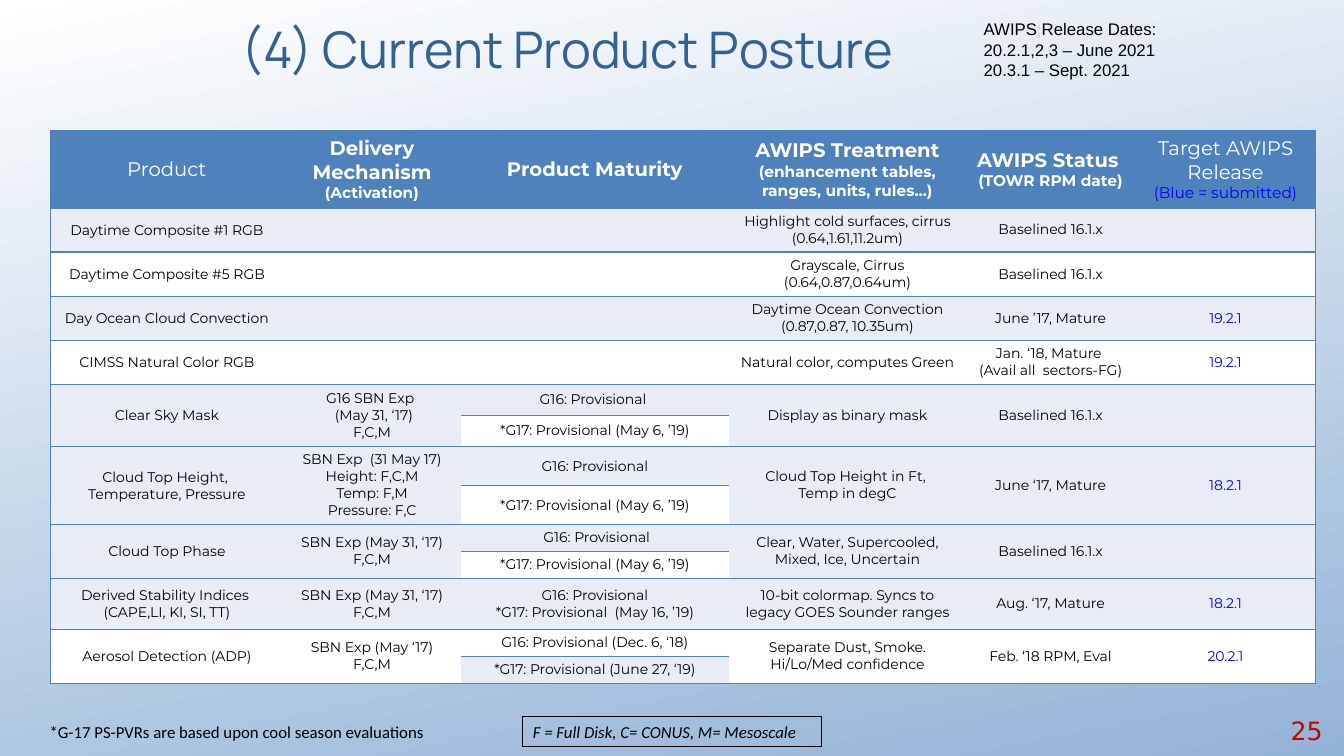
from pptx import Presentation
from pptx.dml.color import RGBColor
from pptx.enum.shapes import MSO_SHAPE
from pptx.enum.text import MSO_ANCHOR, PP_ALIGN
from pptx.oxml import parse_xml
from pptx.oxml.ns import nsdecls, qn
from pptx.util import Cm, Pt

STEEL = RGBColor(0x4F, 0x81, 0xBD)
NAVY = RGBColor(0x37, 0x60, 0x92)
SKY = RGBColor(0x93, 0xB3, 0xD7)
PALE = RGBColor(0xE8, 0xEC, 0xF4)
WHITE = RGBColor(0xFF, 0xFF, 0xFF)
BLACK = RGBColor(0, 0, 0)
BLUE = RGBColor(0, 0, 0xFF)
RED = RGBColor(0xCC, 0, 0)

NO_GRID_STYLE = "{2D5ABB26-0587-4C30-8999-92F81FD0307C}"
COLUMN_WIDTHS = [5.87, 4.47, 6.76, 5.97, 4.27, 4.55]
HEADER_HEIGHT = 1.94
MATURITY, RELEASE = 2, 5

# Heading, smaller second line, bold, colour of the second line
HEADERS = [
    ("Product", "", False, WHITE),
    ("Delivery Mechanism", "(Activation)", True, WHITE),
    ("Product Maturity", "", True, WHITE),
    ("AWIPS Treatment", "(enhancement tables,\vranges, units, rules…)", True, WHITE),
    ("AWIPS Status ", "(TOWR RPM date)", True, WHITE),
    ("Target AWIPS Release", "(Blue = submitted)", False, BLUE),
]

# Row heights, fill, then the six columns; two heights split the maturity column
PRODUCTS = [
    ([1.11], PALE, "Daytime Composite #1 RGB", "", [""],
     "Highlight cold surfaces, cirrus (0.64,1.61,11.2um)", "Baselined 16.1.x", ""),
    ([1.11], WHITE, "Daytime Composite #5 RGB", "", [""],
     "Grayscale, Cirrus (0.64,0.87,0.64um)", "Baselined 16.1.x", ""),
    ([1.11], PALE, "Day Ocean Cloud Convection", "", [""],
     "Daytime Ocean Convection\n(0.87,0.87, 10.35um)", "June ’17, Mature", "19.2.1"),
    ([1.11], WHITE, "CIMSS Natural Color RGB", "", [""],
     "Natural color, computes Green", "Jan. ‘18, Mature \n(Avail all  sectors-FG)", "19.2.1"),
    ([0.78, 0.78], PALE, "Clear Sky Mask", "G16 SBN Exp \n (May 31, ‘17)\vF,C,M",
     ["G16: Provisional ", "*G17: Provisional (May 6, ’19)"],
     "Display as binary mask", "Baselined 16.1.x", ""),
    ([1.0, 0.96], PALE, "Cloud Top Height, \nTemperature, Pressure",
     "SBN Exp  (31 May 17)\vHeight: F,C,M\vTemp: F,M\vPressure: F,C",
     ["G16: Provisional", "*G17: Provisional (May 6, ’19)"],
     "Cloud Top Height in Ft, \nTemp in degC", "June ‘17, Mature", "18.2.1"),
    ([0.68, 0.68], PALE, "Cloud Top Phase", "SBN Exp (May 31, ‘17)\vF,C,M",
     [" G16: Provisional", "*G17: Provisional (May 6, ’19)"],
     "Clear, Water, Supercooled, Mixed, Ice, Uncertain", "Baselined 16.1.x", ""),
    ([1.28], PALE, "Derived Stability Indices \n(CAPE,LI, KI, SI, TT)",
     "SBN Exp (May 31, ‘17)\nF,C,M",
     ["G16: Provisional\v*G17: Provisional  (May 16, ’19)"],
     "10-bit colormap. Syncs to legacy GOES Sounder ranges", "Aug. ‘17, Mature", "18.2.1"),
    ([0.68, 0.68], WHITE, "Aerosol Detection (ADP)", "SBN Exp (May ‘17)\vF,C,M",
     ["G16: Provisional (Dec. 6, ‘18)", "*G17: Provisional (June 27, ‘19)"],
     "Separate Dust, Smoke. Hi/Lo/Med confidence", "Feb. ‘18 RPM, Eval", "20.2.1"),
]


class PostureSlide:
    """Holds the table style and the slide being filled."""

    table_font = "Montserrat"

    def __init__(self, deck):
        self.page = deck.slides.add_slide(deck.slide_layouts[5])

    def background(self, start, end, angle):
        fill = self.page.background.fill
        fill.gradient()
        fill.gradient_angle = angle
        for stop, color in zip(fill.gradient_stops, (start, end)):
            stop.color.rgb = color

    def style(self, para, font, size, color, align=PP_ALIGN.LEFT, bold=False, italic=False):
        para.alignment = align
        para.font.name, para.font.size = font, Pt(size)
        para.font.bold, para.font.italic = bold, italic
        para.font.color.rgb = color

    def title(self, text, left, top, width, height):
        title = self.page.shapes.title
        title.left, title.top, title.width, title.height = map(Cm, (left, top, width, height))
        title.text_frame.text = text
        title.text_frame.vertical_anchor = MSO_ANCHOR.MIDDLE
        self.style(title.text_frame.paragraphs[0], "Manrope", 36, NAVY, PP_ALIGN.CENTER)

    def text(self, text, left, top, width, height, font, size, color=BLACK,
             align=PP_ALIGN.LEFT, italic=False, framed=False):
        place = list(map(Cm, (left, top, width, height)))
        if framed:
            box = self.page.shapes.add_shape(MSO_SHAPE.RECTANGLE, *place)
            box.shadow.inherit = False
            box.fill.background()
            box.line.color.rgb = BLACK
            box.line.width = Pt(0.75)
        else:
            box = self.page.shapes.add_textbox(*place)
        frame = box.text_frame
        frame.word_wrap = True
        frame.vertical_anchor = MSO_ANCHOR.TOP
        frame.text = text
        for para in frame.paragraphs:
            self.style(para, font, size, color, align, italic=italic)

    def table(self, left, top):
        heights = [HEADER_HEIGHT] + [height for product in PRODUCTS for height in product[0]]
        table = self.page.shapes.add_table(
            len(heights), len(COLUMN_WIDTHS), Cm(left), Cm(top),
            Cm(sum(COLUMN_WIDTHS)), Cm(sum(heights))).table
        table.horz_banding = table.first_row = False
        table._tbl.tblPr.find(qn("a:tableStyleId")).text = NO_GRID_STYLE
        for column, width in zip(table.columns, COLUMN_WIDTHS):
            column.width = Cm(width)
        for row, height in zip(table.rows, heights):
            row.height = Cm(height)
        return table

    def cell(self, table, row, column, text, fill, size=10, color=BLACK, bold=False):
        cell = table.cell(row, column)
        sides = ["lnT", "lnB"]
        if column == 0:
            sides.insert(0, "lnL")
        elif column == len(COLUMN_WIDTHS) - 1:
            sides.insert(0, "lnR")
        for side in sides:
            cell._tc.get_or_add_tcPr().append(parse_xml(
                f'<a:{side} {nsdecls("a")} w="12700"><a:solidFill>'
                f'<a:srgbClr val="{STEEL}"/></a:solidFill></a:{side}>'))
        cell.fill.solid()
        cell.fill.fore_color.rgb = fill
        cell.vertical_anchor = MSO_ANCHOR.MIDDLE
        cell.text = text
        for para in cell.text_frame.paragraphs:
            self.style(para, self.table_font, size, color, PP_ALIGN.CENTER, bold)
        return cell

    def header(self, table):
        for column, (heading, detail, bold, color) in enumerate(HEADERS):
            cell = self.cell(table, 0, column, heading, STEEL, 14, WHITE, bold)
            if detail:
                para = cell.text_frame.add_paragraph()
                para.text = detail
                self.style(para, self.table_font, 11, color, PP_ALIGN.CENTER, bold)

    def product(self, table, row, product):
        heights, fill, *columns = product
        last = row + len(heights) - 1
        for column, content in enumerate(columns):
            if column == MATURITY:
                other = WHITE if fill == PALE else PALE
                for step, text in enumerate(content):
                    self.cell(table, row + step, column, text, other if step else fill)
                continue
            if last > row:
                table.cell(row, column).merge(table.cell(last, column))
            cell = self.cell(table, row, column, content, fill,
                             color=BLUE if column == RELEASE else BLACK)
            if column == 0:
                cell.margin_left = cell.margin_right = cell.margin_top = Cm(0.03)
                cell.margin_bottom = 0
        return last + 1


def main():
    deck = Presentation()
    deck.slide_width, deck.slide_height = Cm(33.87), Cm(19.05)
    slide = PostureSlide(deck)
    slide.background(SKY, WHITE, 101)
    table = slide.table(1.27, 3.3)
    slide.header(table)
    row = 1
    for product in PRODUCTS:
        row = slide.product(table, row, product)
    slide.text("25", 32.03, 17.9, 1.55, 1.02, "DejaVu Sans", 18, RED, PP_ALIGN.RIGHT)
    slide.text("F = Full Disk, C= CONUS, M= Mesoscale", 13.18, 18.06, 7.52, 0.76,
               "Calibri", 12, italic=True, framed=True)
    slide.text("*G-17 PS-PVRs are based upon cool season evaluations",
               1, 18.06, 10.06, 0.76, "Calibri", 12)
    slide.title("(4) Current Product Posture ", 1.7, 0, 25.45, 2.44)
    slide.text("AWIPS Release Dates:\n20.2.1,2,3 – June 2021\n20.3.1 – Sept. 2021",
               24.54, 0.36, 5.94, 1.8, "Arial", 12)
    deck.save("out.pptx")


if __name__ == "__main__":
    main()
